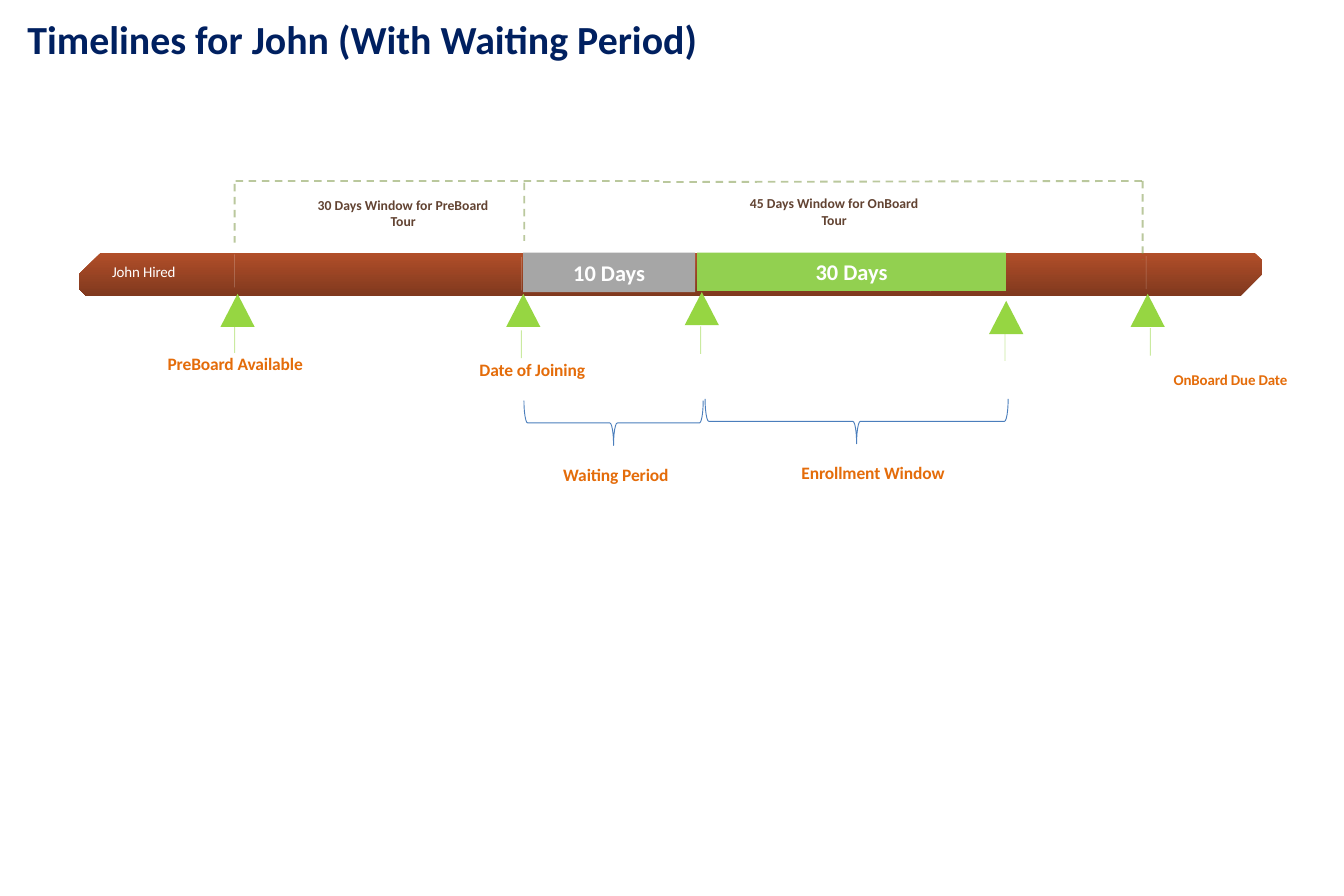
from lxml import etree
from pptx import Presentation
from pptx.dml.color import RGBColor
from pptx.enum.dml import MSO_LINE
from pptx.enum.shapes import MSO_CONNECTOR, MSO_SHAPE
from pptx.enum.text import MSO_ANCHOR, PP_ALIGN
from pptx.oxml.ns import qn
from pptx.util import Cm, Pt

STRAIGHT = MSO_CONNECTOR.STRAIGHT
SNIPPED = MSO_SHAPE.SNIP_2_DIAG_RECTANGLE
RECTANGLE = MSO_SHAPE.RECTANGLE
TRIANGLE = MSO_SHAPE.ISOSCELES_TRIANGLE
BRACE = MSO_SHAPE.LEFT_BRACE
DASH, SOLID = MSO_LINE.DASH, MSO_LINE.SOLID
LEFT, CENTER = PP_ALIGN.LEFT, PP_ALIGN.CENTER
TOP, MIDDLE = MSO_ANCHOR.TOP, MSO_ANCHOR.MIDDLE

FONT = "Calibri"
COLORS = {
    "title": "002060",
    "bar_top": "B24F29",
    "bar_bottom": "7F381E",
    "white": "FFFFFF",
    "marker": "96D642",
    "milestone": "E46C0A",
    "bracket": "77933C",
    "window": "624332",
    "enrollment": "92D050",
    "waiting": "A6A6A6",
    "brace": "4B7EBC",
}


def add_line(x1, y1, x2, y2, color, width, dash, opacity):
    line = slide.shapes.add_connector(STRAIGHT, Cm(x1), Cm(y1), Cm(x2), Cm(y2))
    line.line.color.rgb = RGBColor.from_string(COLORS[color])
    line.line.width = Pt(width)
    line.line.dash_style = dash
    properties = line._element.spPr
    rgb = properties.find(".//" + qn("a:srgbClr"))
    etree.SubElement(rgb, qn("a:alpha"), val=str(opacity * 1000))
    etree.SubElement(properties, qn("a:effectLst"))


def write_text(shape, text, size, color, bold=True, align=CENTER, anchor=MIDDLE):
    frame = shape.text_frame
    frame.word_wrap = True
    frame.vertical_anchor = anchor
    frame.text = text
    paragraph = frame.paragraphs[0]
    paragraph.alignment = align
    paragraph.font.name = FONT
    paragraph.font.size = Pt(size)
    paragraph.font.bold = bold
    paragraph.font.color.rgb = RGBColor.from_string(COLORS[color])


prs = Presentation()
prs.slide_width, prs.slide_height = Cm(38.1), Cm(25.4)
slide = prs.slides.add_slide(prs.slide_layouts[6])

title = slide.shapes.add_textbox(Cm(0.53), Cm(0.28), Cm(36.53), Cm(2.26))
write_text(title, "Timelines for John (With Waiting Period)", 32, "title", align=LEFT, anchor=TOP)

timeline = slide.shapes.add_shape(SNIPPED, Cm(2.24), Cm(7.16), Cm(33.53), Cm(1.24))
timeline.shadow.inherit = False
timeline.line.fill.background()
timeline.adjustments[0] = 0.5
timeline.adjustments[1] = 0.17
timeline.fill.gradient()
timeline.fill.gradient_angle = 270
for stop, color in zip(timeline.fill.gradient_stops, ("bar_top", "bar_bottom")):
    stop.color.rgb = RGBColor.from_string(COLORS[color])

for x, y in [(6.65, 7.21), (14.78, 7.29), (26.37, 7.32), (32.49, 7.26)]:
    add_line(x, y, x, y + 0.94, "white", 0.5, SOLID, 30)

for text, x, width, height, color in [
    ("30 Days", 19.76, 8.76, 1.09, "enrollment"),
    ("10 Days", 14.83, 4.88, 1.12, "waiting"),
]:
    period = slide.shapes.add_shape(RECTANGLE, Cm(x), Cm(7.16), Cm(width), Cm(height))
    period.shadow.inherit = False
    period.fill.solid()
    period.fill.fore_color.rgb = RGBColor.from_string(COLORS[color])
    period.line.fill.background()
    write_text(period, text, 18, "white")

for x, y, stem_x, stem_y in [
    (6.25, 8.33, 6.65, 9.22),
    (14.35, 8.33, 14.78, 9.37),
    (19.41, 8.28, 19.86, 9.25),
    (28.04, 8.53, 28.49, 9.45),
    (32.05, 8.33, 32.61, 9.3),
]:
    marker = slide.shapes.add_shape(TRIANGLE, Cm(x), Cm(y), Cm(0.97), Cm(0.94))
    marker.shadow.inherit = False
    marker.fill.solid()
    marker.fill.fore_color.rgb = RGBColor.from_string(COLORS["marker"])
    marker.line.fill.background()
    add_line(stem_x, stem_y, stem_x, stem_y + 0.78, "marker", 0.75, SOLID, 50)

for ends in [
    (6.68, 5.13, 18.69, 5.13),
    (18.8, 5.16, 32.39, 5.13),
    (6.65, 5.21, 6.65, 6.88),
    (14.86, 5.18, 14.86, 6.83),
    (32.39, 5.13, 32.39, 7.37),
]:
    add_line(*ends, "bracket", 1.5, DASH, 50)

for x, y, span in [(16.76, 9.45, 5.08), (23.65, 7.65, 8.59)]:
    brace = slide.shapes.add_shape(BRACE, Cm(x), Cm(y), Cm(1.27), Cm(span))
    brace.shadow.inherit = False
    brace.rotation = 270
    brace.fill.background()
    brace.line.color.rgb = RGBColor.from_string(COLORS["brace"])
    brace.line.width = Pt(0.75)

for text, x, y, width, height, size, color, bold, align in [
    ("John Hired", 3.18, 7.34, 3.23, 0.69, 12, "white", False, LEFT),
    ("PreBoard Available", 3.51, 9.93, 6.32, 0.76, 14, "milestone", True, CENTER),
    ("Date of Joining", 12.4, 9.93, 5.38, 1.07, 14, "milestone", True, CENTER),
    ("OnBoard Due Date", 31.67, 10.21, 6.43, 1.12, 12, "milestone", True, CENTER),
    ("Waiting Period", 14.3, 13.08, 6.32, 0.76, 14, "milestone", True, CENTER),
    ("Enrollment Window", 21.59, 13.03, 6.32, 0.76, 14, "milestone", True, CENTER),
    ("30 Days Window for PreBoard Tour", 8.89, 5.46, 5.08, 1.17, 11, "window", True, CENTER),
    ("45 Days Window for OnBoard Tour", 21.11, 5.41, 5.08, 1.17, 11, "window", True, CENTER),
]:
    label = slide.shapes.add_textbox(Cm(x), Cm(y), Cm(width), Cm(height))
    frame = label.text_frame
    frame.margin_left = frame.margin_right = frame.margin_top = frame.margin_bottom = 0
    write_text(label, text, size, color, bold, align)
    if color != "window":
        frame.paragraphs[0].runs[0].font._element.set("spc", "-10")

prs.save("out.pptx")
